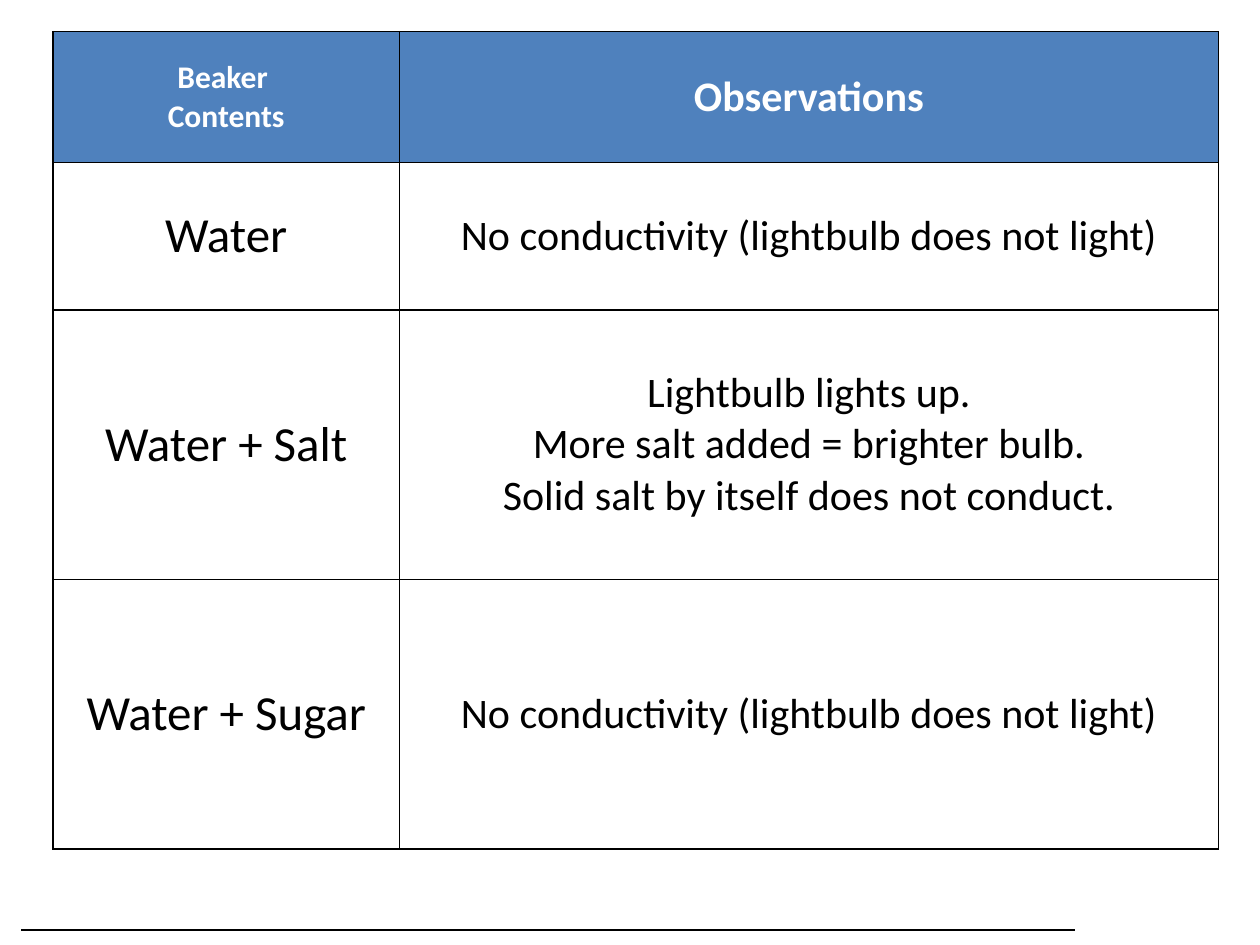
from lxml import etree
from pptx import Presentation
from pptx.dml.color import RGBColor
from pptx.enum import shapes, text
from pptx.oxml import ns
from pptx.util import Inches, Pt

COLORS = {"header": "4F81BD", "body": "FFFFFF", "header_text": "FFFFFF", "ink": "000000"}
FONT = "Calibri"
COLUMN_WIDTHS = [2.75, 6.5]
ROW_HEIGHTS = [1.04, 1.17, 2.14, 2.14]
NO_CONDUCTIVITY = "No conductivity (lightbulb does not light)"
ROWS = [
    ["Beaker \nContents", "Observations"],
    ["Water", NO_CONDUCTIVITY],
    [
        "Water + Salt",
        "Lightbulb lights up.\nMore salt added = brighter bulb.\n"
        "Solid salt by itself does not conduct.",
    ],
    ["Water + Sugar", NO_CONDUCTIVITY],
]


def rgb(name):
    return RGBColor.from_string(COLORS[name])


def write_text(frame, content, size=24, color="ink", bold=False):
    frame.text = content
    for paragraph in frame.paragraphs:
        paragraph.alignment = text.PP_ALIGN.CENTER
        for run in paragraph.runs:
            run.font.name = FONT
            run.font.size = Pt(size)
            run.font.bold = bold
            run.font.color.rgb = rgb(color)


def add_borders(cell, width=1):
    properties = cell._tc.get_or_add_tcPr()
    for index, side in enumerate(["lnL", "lnR", "lnT", "lnB"]):
        border = etree.Element(ns.qn(f"a:{side}"), w=str(Pt(width)))
        fill = etree.SubElement(border, ns.qn("a:solidFill"))
        etree.SubElement(fill, ns.qn("a:srgbClr"), val=COLORS["ink"])
        properties.insert(index, border)


def format_cell(cell, content, size, is_header):
    cell.vertical_anchor = text.MSO_ANCHOR.MIDDLE
    cell.fill.solid()
    cell.fill.fore_color.rgb = rgb("header" if is_header else "body")
    write_text(
        cell.text_frame,
        content,
        size=size,
        color="header_text" if is_header else "ink",
        bold=is_header,
    )
    add_borders(cell)


def add_observation_table(slide):
    table = slide.shapes.add_table(
        len(ROWS), len(COLUMN_WIDTHS), Inches(0.42), Inches(0.25),
        Inches(sum(COLUMN_WIDTHS)), Inches(sum(ROW_HEIGHTS)),
    ).table
    for column, width in zip(table.columns, COLUMN_WIDTHS):
        column.width = Inches(width)
    for row_index, (row, height) in enumerate(zip(table.rows, ROW_HEIGHTS)):
        row.height = Inches(height)
        is_header = row_index == 0
        sizes = [18, 24] if is_header else [28, 24]
        for cell, content, size in zip(row.cells, ROWS[row_index], sizes):
            format_cell(cell, content, size, is_header)


def add_line(slide, left, right, top, width=0.75):
    line = slide.shapes.add_connector(
        shapes.MSO_CONNECTOR.STRAIGHT, Inches(left), Inches(top), Inches(right), Inches(top)
    )
    line.line.color.rgb = rgb("ink")
    line.line.width = Pt(width)
    etree.SubElement(line._element.spPr, ns.qn("a:effectLst"))


def main():
    presentation = Presentation()
    presentation.slide_width = Inches(10)
    presentation.slide_height = Inches(7.5)
    slide = presentation.slides.add_slide(presentation.slide_layouts[6])
    add_line(slide, left=0.17, right=8.53, top=7.38)
    add_observation_table(slide)
    presentation.save("out.pptx")


if __name__ == "__main__":
    main()
